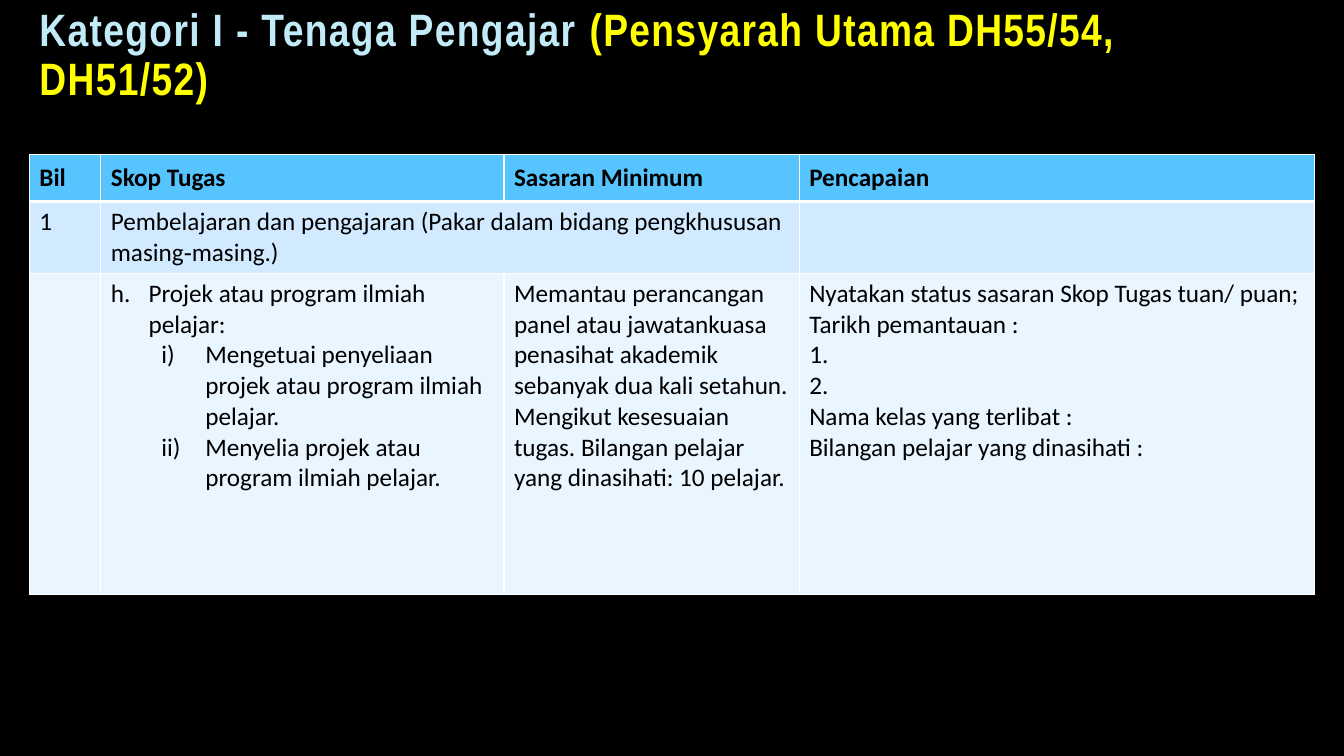
import pptx
import pptx.dml.color
import pptx.enum.text
import pptx.oxml
import pptx.oxml.ns
import pptx.util
from lxml import etree

Cm = pptx.util.Cm
Pt = pptx.util.Pt
qn = pptx.oxml.ns.qn

COLOURS = {
    "background": "000000",
    "title": "C1EBF7",
    "grade": "FFFF00",
    "outline": "404040",
    "text": "000000",
    "border": "FFFFFF",
    "header": "56C5FF",
    "topic": "D1EAFF",
    "detail": "E9F5FF",
}
COLUMN_WIDTHS = [1.8, 10.16, 7.44, 12.98]
ROW_HEIGHTS = [1.19, 1.78, 8.1]
ROW_FILLS = ["header", "topic", "detail"]

# Numbering: (style, first number, left margin in cm, hanging indent in cm)
LETTER = ("alphaLcPeriod", 8, 0.95, 0.95)
ROMAN = ("romanLcParenR", 1, 2.38, 1.11)

# Each cell is a list of (text, numbering) paragraphs
ROWS = [
    [[("Bil", None)], [("Skop Tugas", None)],
     [("Sasaran Minimum", None)], [("Pencapaian", None)]],
    [[("1", None)],
     [("Pembelajaran dan pengajaran (Pakar dalam bidang pengkhususan masing‐masing.)", None)],
     [], []],
    [[],
     [("Projek atau program ilmiah pelajar:", LETTER),
      ("Mengetuai penyeliaan projek atau program ilmiah pelajar.", ROMAN),
      ("Menyelia projek atau program ilmiah pelajar.", ROMAN)],
     [("Memantau perancangan panel atau jawatankuasa penasihat akademik sebanyak dua kali setahun.", None),
      ("Mengikut kesesuaian tugas. Bilangan pelajar yang dinasihati: 10 pelajar.", None)],
     [("Nyatakan status sasaran Skop Tugas tuan/ puan;", None),
      ("Tarikh pemantauan :", None),
      ("1.", None),
      ("2.", None),
      ("Nama kelas yang terlibat :", None),
      ("Bilangan pelajar yang dinasihati :", None)]],
]


def colour(name):
    return pptx.dml.color.RGBColor.from_string(COLOURS[name])


def format_span(span, font_name, size, colour_name, bold):
    span.font.name = font_name
    span.font.size = Pt(size)
    span.font.bold = bold
    span.font.color.rgb = colour(colour_name)


def make_line(tag, width, colour_name, alpha=None):
    line = etree.Element(qn(tag), w=str(Pt(width)))
    fill = etree.SubElement(line, qn("a:solidFill"))
    tint = etree.SubElement(fill, qn("a:srgbClr"), val=COLOURS[colour_name])
    if alpha:
        etree.SubElement(tint, qn("a:alpha"), val=str(alpha * 1000))
    return line


def number_paragraph(para, numbering):
    style, start, margin, hanging = numbering
    properties = para._p.get_or_add_pPr()
    properties.set("marL", str(Cm(margin)))
    properties.set("indent", str(-Cm(hanging)))
    if numbering is ROMAN:
        para.level = 1
    number = etree.SubElement(properties, qn("a:buAutoNum"), type=style)
    if start > 1:
        number.set("startAt", str(start))


def fill_cell(cell, paragraphs, row):
    # Fill and borders
    cell.fill.solid()
    cell.fill.fore_color.rgb = colour(ROW_FILLS[row])
    widths = {"a:lnL": 1, "a:lnR": 1,
              "a:lnT": 3 if row == 1 else 1, "a:lnB": 3 if row == 0 else 1}
    properties = cell._tc.get_or_add_tcPr()
    for position, (tag, width) in enumerate(widths.items()):
        properties.insert(position, make_line(tag, width, "border"))

    # Text
    if row == 0:
        cell.vertical_anchor = pptx.enum.text.MSO_ANCHOR.MIDDLE
    cell.text_frame.text = "\n".join(text for text, _ in paragraphs)
    for para, (_, numbering) in zip(cell.text_frame.paragraphs, paragraphs):
        if numbering:
            number_paragraph(para, numbering)
        for span in para.runs:
            format_span(span, "Calibri", 18, "text", row == 0)


def place_title(page, left, top, width, height):
    box = page.shapes.title
    box.left, box.top, box.width, box.height = left, top, width, height
    frame = box.text_frame
    frame.word_wrap = True
    frame.auto_size = pptx.enum.text.MSO_AUTO_SIZE.NONE
    frame.vertical_anchor = pptx.enum.text.MSO_ANCHOR.BOTTOM
    para = frame.paragraphs[0]
    para.alignment = pptx.enum.text.PP_ALIGN.LEFT
    para.line_spacing = 0.9
    for text, colour_name in [("Kategori I - Tenaga Pengajar ", "title"),
                              ("(Pensyarah Utama DH55/54, DH51/52)", "grade")]:
        span = para.add_run()
        span.text = text
        format_span(span, "Arial Narrow", 32.4, colour_name, True)
        properties = span._r.get_or_add_rPr()
        properties.set("spc", "100")
        properties.insert(0, make_line("a:ln", 0.75, "outline", alpha=10))


def place_task_table(page, left, top):
    table = page.shapes.add_table(
        len(ROWS), len(COLUMN_WIDTHS), left, top,
        Cm(sum(COLUMN_WIDTHS)), Cm(sum(ROW_HEIGHTS))).table
    table.horz_banding = False
    for column, width in zip(table.columns, COLUMN_WIDTHS):
        column.width = Cm(width)
    for row, height in zip(table.rows, ROW_HEIGHTS):
        row.height = Cm(height)
    for row, contents in enumerate(ROWS):
        for column, paragraphs in enumerate(contents):
            fill_cell(table.cell(row, column), paragraphs, row)
    table.cell(1, 1).merge(table.cell(1, 2))


def main():
    deck = pptx.Presentation()
    deck.slide_width, deck.slide_height = Cm(33.87), Cm(19.05)
    page = deck.slides.add_slide(deck.slide_layouts[5])
    page.background.fill.solid()
    page.background.fill.fore_color.rgb = colour("background")
    margin = Cm(0.74)
    place_title(page, margin, Cm(1.07), Cm(28.88), Cm(1.7))
    place_task_table(page, margin, Cm(3.89))
    deck.save("out.pptx")


if __name__ == "__main__":
    main()
